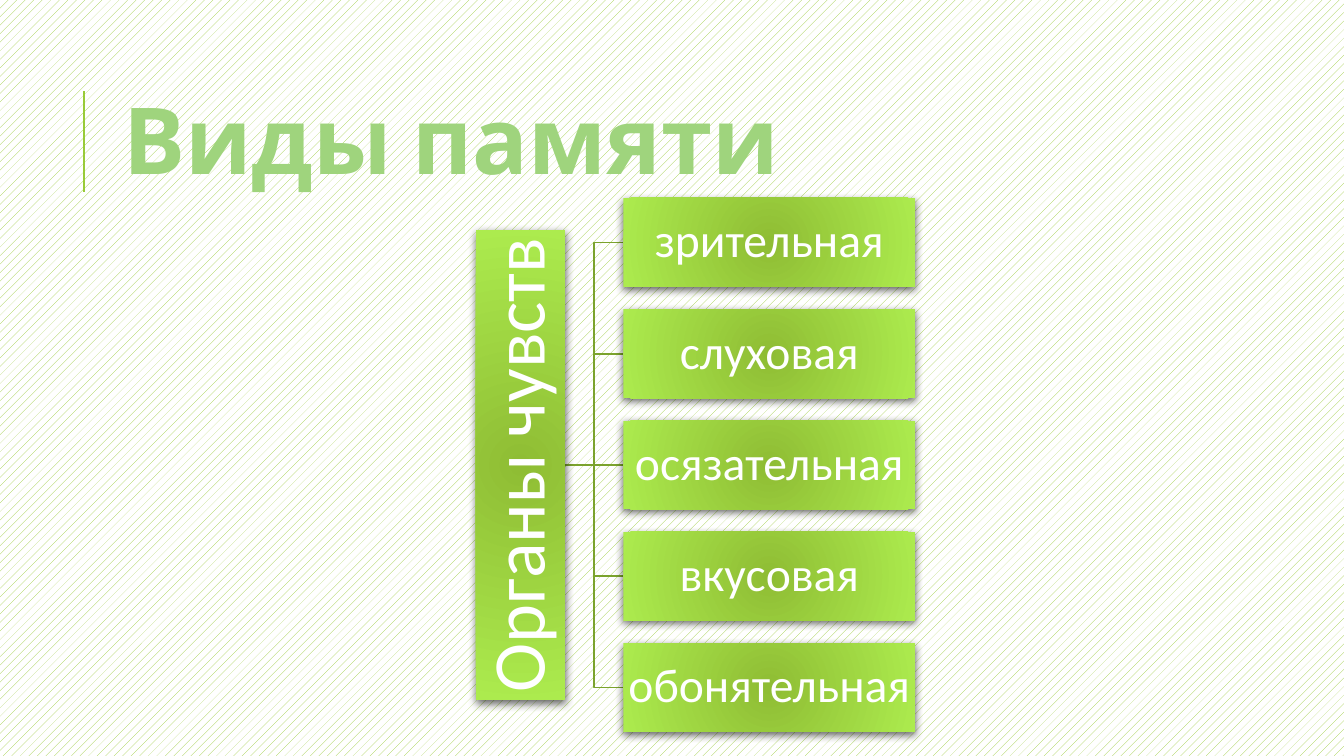
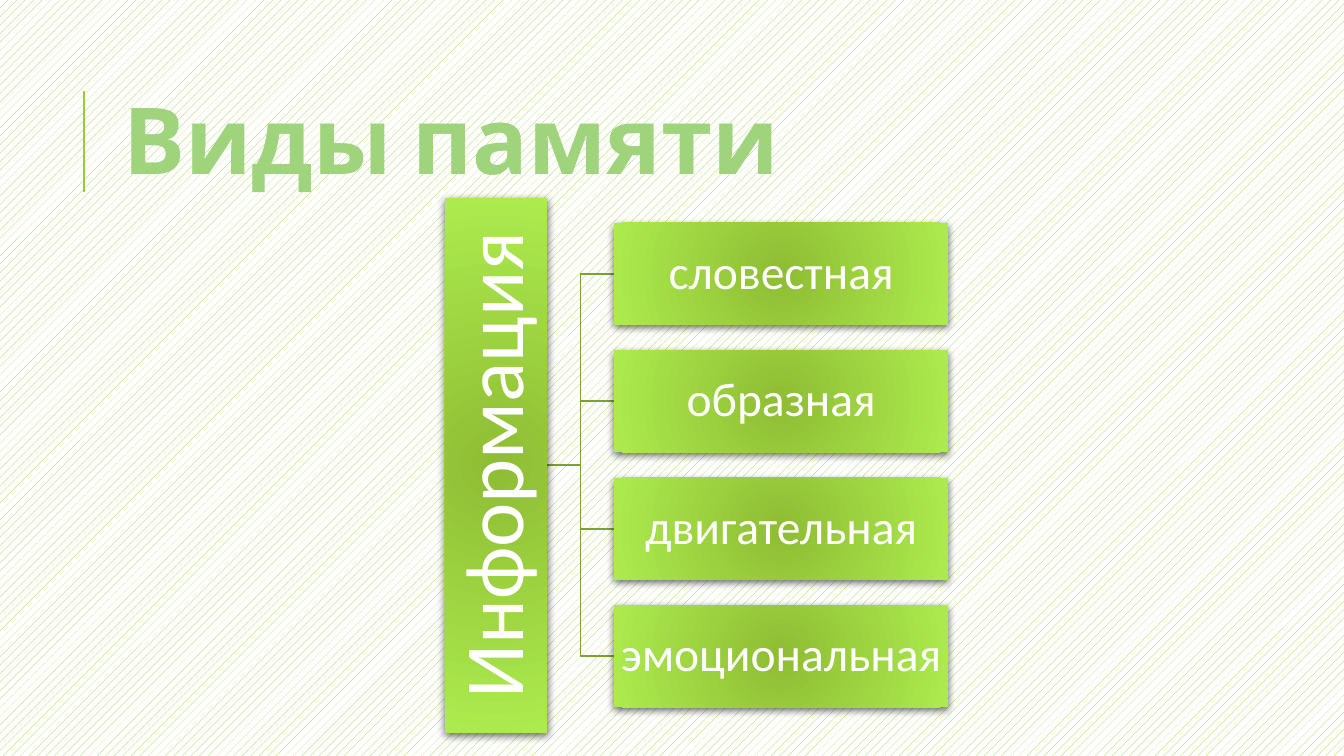
from lxml.etree import SubElement
from pptx import Presentation
from pptx.dml.color import RGBColor
from pptx.enum.dml import MSO_PATTERN
from pptx.enum.shapes import MSO_CONNECTOR, MSO_SHAPE
from pptx.enum.text import MSO_ANCHOR, PP_ALIGN
from pptx.oxml import parse_xml
from pptx.oxml.ns import nsdecls, qn
from pptx.util import Pt

EMU_PER_PX = 914400 / 100.8
COLORS = {
    "accent": "99CB38",
    "paper": "FFFFFF",
    "title": "9FD47D",
    "title_outline": "4A7C29",
    "branch": "7BA32D",
    "box_center": "8FBD34",
    "box_edge": "ACEB4E",
    "box_text": "FFFFFF",
    "shadow": "000000",
}
TITLE_FONT, BOX_FONT = "Cabin", "Calibri"
TITLE_ONLY = 5
TREE_MIDDLE = 465
TREES = [
    {
        "title": "Виды памяти",
        "root": "Органы чувств", "root_size": 53,
        "left": 476, "root_length": 470, "thickness": 89,
        "leaves": ["зрительная", "слуховая", "осязательная", "вкусовая", "обонятельная"],
    },
    {
        "title": "Виды памяти",
        "root": "Информация", "root_size": 60,
        "left": 445, "root_length": 535, "thickness": 102,
        "leaves": ["словестная", "образная", "двигательная", "эмоциональная"],
    },
]


def px(length):
    return round(length * EMU_PER_PX)


def color(name):
    return RGBColor.from_string(COLORS[name])


def place(shape, left, top, width, height):
    shape.left, shape.top = px(left), px(top)
    shape.width, shape.height = px(width), px(height)


def add_text(frame, text, size, font_name, color_name, line_spacing):
    frame.vertical_anchor = MSO_ANCHOR.MIDDLE
    para = frame.paragraphs[0]
    para.line_spacing = line_spacing
    span = para.add_run()
    span.text = text
    span.font.size = Pt(size)
    span.font.name = font_name
    span.font.color.rgb = color(color_name)
    return para, span


def add_straight_line(page, start, end, color_name, width):
    line = page.shapes.add_connector(MSO_CONNECTOR.STRAIGHT, *map(px, start + end))
    line.line.color.rgb = color(color_name)
    line.line.width = Pt(width)
    SubElement(line.element.spPr, qn("a:effectLst"))
    return line


def style_template(deck):
    """Set the shared background and title position."""
    fill = deck.slide_master.background.fill
    fill.patterned()
    fill.pattern = MSO_PATTERN.PERCENT_20
    fill.fore_color.rgb = color("accent")
    fill.back_color.rgb = color("paper")
    place(deck.slide_layouts[TITLE_ONLY].placeholders[0], 113, 65, 1071, 165)


def add_title(page, text):
    para, span = add_text(page.shapes.title.text_frame, text, 66, TITLE_FONT, "title", 0.8)
    para.alignment = PP_ALIGN.LEFT
    span.font.bold = True
    span.font._element.insert(0, parse_xml(
        f'<a:ln {nsdecls("a")} w="{Pt(1.75)}"><a:solidFill>'
        f'<a:srgbClr val="{COLORS["title_outline"]}"/></a:solidFill></a:ln>'))


def add_glow_and_shadow(box):
    """Give a box its radial gradient and soft shadow."""
    properties = box.element.spPr
    gradient = parse_xml(
        f'<a:gradFill {nsdecls("a")} rotWithShape="1"><a:gsLst>'
        f'<a:gs pos="0"><a:srgbClr val="{COLORS["box_center"]}"/></a:gs>'
        f'<a:gs pos="100000"><a:srgbClr val="{COLORS["box_edge"]}"/></a:gs></a:gsLst>'
        '<a:path path="circle"><a:fillToRect l="100000" t="100000" r="100000" b="100000"/>'
        '</a:path></a:gradFill>')
    properties.find(qn("a:prstGeom")).addnext(gradient)
    properties.append(parse_xml(
        f'<a:effectLst {nsdecls("a")}><a:outerShdw blurRad="{Pt(6)}" dist="{Pt(2)}" '
        f'dir="5400000" rotWithShape="0"><a:srgbClr val="{COLORS["shadow"]}">'
        '<a:alpha val="60000"/></a:srgbClr></a:outerShdw></a:effectLst>'))


def add_box(page, center_x, center_y, width, height, text, size, inset, rotation=0):
    box = page.shapes.add_shape(MSO_SHAPE.RECTANGLE, 0, 0, 0, 0)
    place(box, center_x - width / 2, center_y - height / 2, width, height)
    box.rotation = rotation
    box.line.fill.background()
    add_glow_and_shadow(box)
    frame = box.text_frame
    frame.word_wrap = True
    frame.margin_left = frame.margin_right = px(inset)
    frame.margin_top = frame.margin_bottom = px(inset)
    para, _ = add_text(frame, text, size, BOX_FONT, "box_text", 0.9)
    para.alignment = PP_ALIGN.CENTER


def add_branch(page, left, right, leaf_y):
    """Join the root to a leaf, with a bend halfway when they are not level."""
    start, end = (left, TREE_MIDDLE), (right, leaf_y)
    if leaf_y == TREE_MIDDLE:
        add_straight_line(page, start, end, "branch", 1.25)
        return
    bend = (left + right) / 2
    corners = [(bend, TREE_MIDDLE), (bend, leaf_y), end]
    builder = page.shapes.build_freeform(*map(px, start))
    builder.add_line_segments([(px(x), px(y)) for x, y in corners], close=False)
    branch = builder.convert_to_shape()
    branch.fill.background()
    branch.line.color.rgb = color("branch")
    branch.line.width = Pt(1.25)
    branch.shadow.inherit = False


def add_tree(page, tree):
    thickness, leaves = tree["thickness"], tree["leaves"]
    leaf_width = thickness * 3.28
    root_right = tree["left"] + thickness
    leaf_left = root_right + leaf_width / 5
    pitch = thickness * 1.25
    first_y = TREE_MIDDLE - pitch * (len(leaves) - 1) / 2
    rows = [first_y + pitch * index for index in range(len(leaves))]
    for leaf_y in rows:
        add_branch(page, root_right, leaf_left, leaf_y)
    add_box(page, tree["left"] + thickness / 2, TREE_MIDDLE, tree["root_length"], thickness,
            tree["root"], tree["root_size"], 4, rotation=270)
    for leaf_y, text in zip(rows, leaves):
        add_box(page, leaf_left + leaf_width / 2, leaf_y, leaf_width, thickness, text, 34, 2)


def main():
    deck = Presentation()
    deck.slide_width, deck.slide_height = px(1344), px(756)
    style_template(deck)
    for tree in TREES:
        page = deck.slides.add_slide(deck.slide_layouts[TITLE_ONLY])
        add_title(page, tree["title"])
        add_tree(page, tree)
    title_rule = add_straight_line(deck.slides[0], (84, 192), (84, 91), "accent", 1.5)
    deck.slide_master.shapes.element.append(title_rule.element)
    deck.save("out.pptx")


if __name__ == "__main__":
    main()
